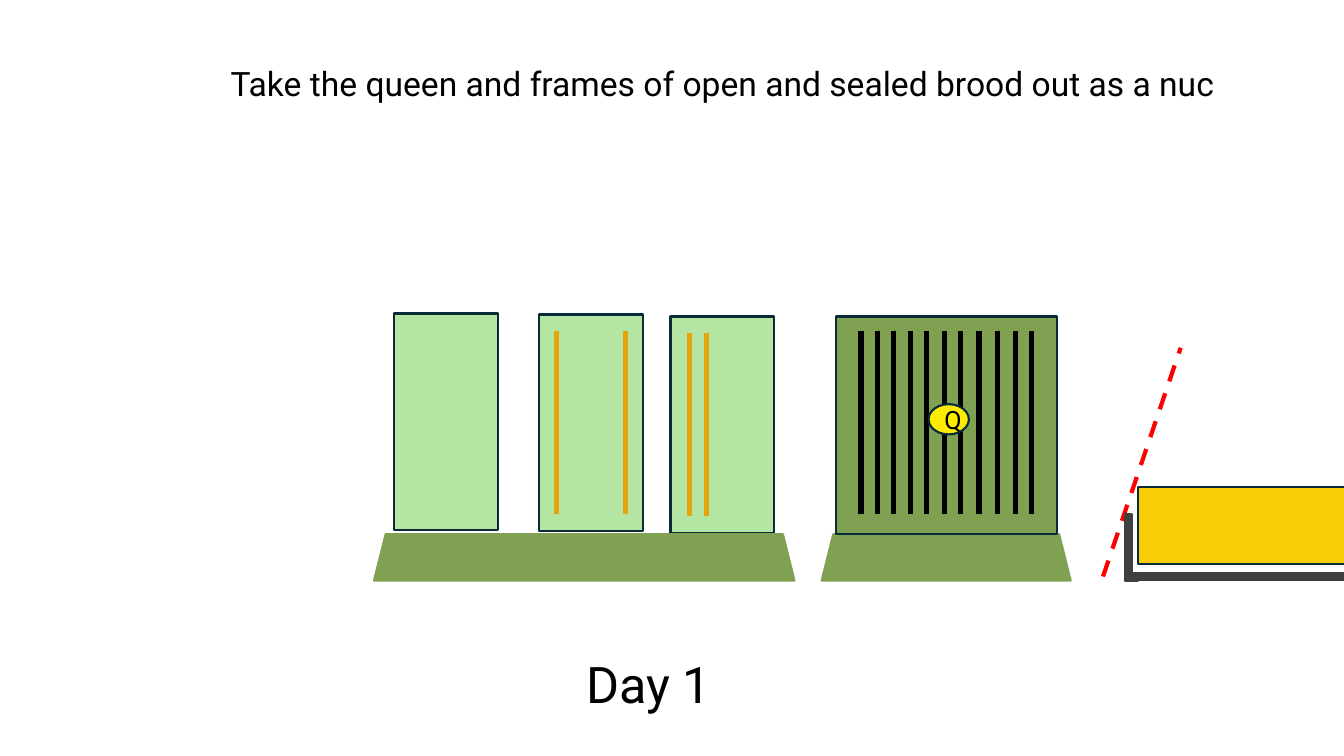
from pptx import Presentation
from pptx import util as u
from pptx.dml.color import RGBColor
from pptx.enum import dml, shapes, text
from pptx.oxml.ns import qn
from lxml import etree

# Content: lengths in inches
TITLE = ("Take the queen and frames of open and sealed brood out as a nuc", (2.1, 0.58, 10.13, 0.5))
DAY = ("Day 1", (5.34, 6.43, 2.19, 0.71))
QUEEN = ("Q", (9.21, 4.01, 0.4, 0.3))

NUC_SIZE = (1.03, 2.15)
NUCS = [  # left, top, frame positions
    (3.91, 3.11, []),
    (5.35, 3.12, [5.52, 6.2]),
    (6.65, 3.14, [6.84, 7.01]),
]
NUC_STAND = (3.71, 5.3, 4.17, 0.46)
HIVE = (8.29, 3.14, 2.19, 2.16)
HIVE_STAND = (8.15, 5.3, 2.47, 0.46)
HIVE_FRAMES = [8.54, 8.7, 8.86, 9.03, 9.19, 9.37, 9.53, 9.71, 9.89, 10.07, 10.23]
FRAME_INSET, FRAME_HEIGHT = 0.16, 1.82

SUPER = (11.29, 4.83, 2.19, 0.77)
TRAY_EDGE = (11.16, 5.1, 0.13, 0.66)
TRAY_BASE = ((13.62, 5.72), (11.15, 5.72))
RAMP = ((10.94, 5.72), (11.71, 3.45))

THEME = {
    "font": "Roboto", "title": 24, "day": 36, "queen_size": 18,
    "ink": "000000", "outline": "092A39", "hive": "80A152", "nuc": "B4E5A2",
    "nuc_frame": "E5A30D", "queen": "FCEC03", "super": "F7CD05",
    "tray": "404040", "ramp": "FF0000",
    "edge": 1.5, "frame": 3.75, "ramp_width": 3, "tray_width": 7,
}
KIND = shapes.MSO_SHAPE

deck = Presentation()
deck.slide_width, deck.slide_height = u.Inches(13.33), u.Inches(7.5)
page = deck.slides.add_slide(deck.slide_layouts[6])


def color(name):
    return RGBColor.from_string(THEME[name])


def add_block(kind, place, fill, outline="outline"):
    block = page.shapes.add_shape(kind, *map(u.Inches, place))
    block.shadow.inherit = False
    block.fill.solid()
    block.fill.fore_color.rgb = color(fill)
    block.line.color.rgb = color(outline)
    block.line.width = u.Pt(THEME["edge"])
    return block


def add_line(start, end, ink, width):
    line = page.shapes.add_connector(shapes.MSO_CONNECTOR.STRAIGHT, *map(u.Inches, start + end))
    line.line.color.rgb = color(ink)
    line.line.width = u.Pt(THEME[width])
    etree.SubElement(line._element.spPr, qn("a:effectLst"))
    return line


def add_frames(positions, top, ink):
    for x in positions:
        add_line((x, top), (x, top + FRAME_HEIGHT), ink, "frame")


def write(box, words, size, align):
    para = box.text_frame.paragraphs[0]
    para.text = words
    para.alignment = align
    para.font.name = THEME["font"]
    para.font.size = u.Pt(THEME[size])
    para.font.color.rgb = color("ink")


def add_label(words, place, size):
    box = page.shapes.add_textbox(*map(u.Inches, place))
    box.text_frame.word_wrap = True
    box.text_frame.auto_size = text.MSO_AUTO_SIZE.SHAPE_TO_FIT_TEXT
    write(box, words, size, text.PP_ALIGN.CENTER)


# Super on its tray, with the ramp
add_block(KIND.RECTANGLE, SUPER, "super")
ramp = add_line(*RAMP, "ramp", "ramp_width")
ramp.line.dash_style = dml.MSO_LINE.DASH
add_block(KIND.CORNER, TRAY_EDGE, "tray", "tray")
add_line(*TRAY_BASE, "tray", "tray_width")

# Nucs on their shared stand
for left, top, frames in NUCS:
    add_block(KIND.RECTANGLE, (left, top, *NUC_SIZE), "nuc")
    add_frames(frames, top + FRAME_INSET, "nuc_frame")
add_block(KIND.TRAPEZOID, NUC_STAND, "hive", "hive")

# Main hive with the queen
add_block(KIND.TRAPEZOID, HIVE_STAND, "hive", "hive")
add_block(KIND.RECTANGLE, HIVE, "hive")
add_frames(HIVE_FRAMES, 3.28, "ink")
queen_name, queen_place = QUEEN
queen = add_block(KIND.OVAL, queen_place, "queen")
queen.text_frame.vertical_anchor = text.MSO_ANCHOR.MIDDLE
write(queen, queen_name, "queen_size", text.PP_ALIGN.LEFT)

# Labels
add_label(*TITLE, "title")
add_label(*DAY, "day")

deck.save("out.pptx")
